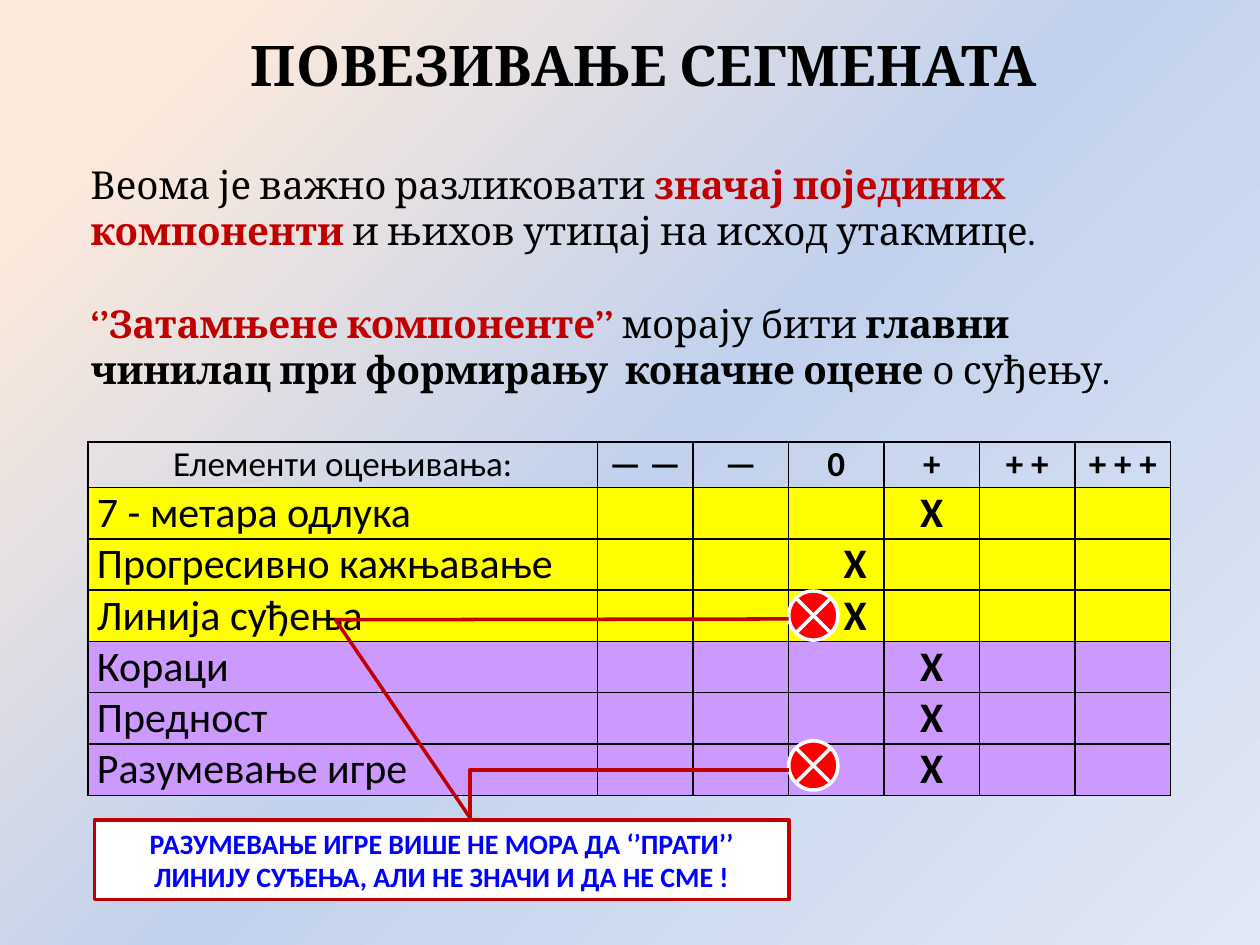
from copy import deepcopy
from typing import NamedTuple

from pptx import Presentation
from pptx.dml.color import RGBColor
from pptx.enum.shapes import MSO_CONNECTOR, MSO_SHAPE
from pptx.enum.text import MSO_ANCHOR, MSO_AUTO_SIZE, PP_ALIGN
from pptx.oxml import parse_xml
from pptx.oxml.ns import nsdecls, qn
from pptx.util import Pt

BLACK = RGBColor(0x00, 0x00, 0x00)
WHITE = RGBColor(0xFF, 0xFF, 0xFF)
RED = RGBColor(0xFF, 0x00, 0x00)
DARK_RED = RGBColor(0xC0, 0x00, 0x00)
BLUE = RGBColor(0x00, 0x00, 0xFF)
YELLOW = RGBColor(0xFF, 0xFF, 0x00)
PURPLE = RGBColor(0xCC, 0x99, 0xFF)
BACKGROUND_STOPS = [
    (0.1, RGBColor(0xFD, 0xEA, 0xDA)),
    (0.5, RGBColor(0xC2, 0xD1, 0xED)),
    (1.0, RGBColor(0xE1, 0xE8, 0xF5)),
]
SERIF, SANS = "Cambria", "Calibri"


class TextPart(NamedTuple):
    text: str
    color: RGBColor = BLACK
    bold: bool = False


class Rating(NamedTuple):
    element: str
    column: int
    fill: RGBColor
    indent: float = 0


BODY = [
    [
        TextPart("Веома је важно разликовати "),
        TextPart("значај појединих компоненти ", DARK_RED, True),
        TextPart("и њихов утицај на исход утакмице."),
    ],
    [
        TextPart("‘’Затамњене компоненте’’ ", DARK_RED, True),
        TextPart("морају бити "),
        TextPart("главни чинилац при формирању  коначне оцене", bold=True),
        TextPart(" о суђењу."),
    ],
]
HEADINGS = ["Елементи оцењивања:", "— —", "—", "0", "+", "+ +", "+ + +"]
RATINGS = [
    Rating("7 - метара одлука", 4, YELLOW),
    Rating("Прогресивно кажњавање", 3, YELLOW, 21.7),
    Rating("Линија суђења", 3, YELLOW, 21.7),
    Rating("Кораци", 4, PURPLE),
    Rating("Предност", 4, PURPLE),
    Rating("Разумевање игре", 4, PURPLE),
]
ROW_HEIGHT = 25.92
NAME_WIDTH, GRADE_WIDTH = 291, 54.6


def place(shape, left: float, top: float, width: float, height: float) -> None:
    shape.left, shape.top, shape.width, shape.height = map(Pt, (left, top, width, height))


def set_font(font, name: str, size: float, color: RGBColor, bold: bool) -> None:
    font.name, font.size, font.bold = name, Pt(size), bold
    font.color.rgb = color


def paint_background(slide) -> None:
    fill = slide.background.fill
    fill.gradient()
    fill.gradient_angle = 315
    stop_list = next(slide.element.iter(qn("a:gsLst")))
    stop_list.insert(1, deepcopy(stop_list[0]))
    for stop, (position, color) in zip(fill.gradient_stops, BACKGROUND_STOPS):
        stop.position = position
        stop.color.rgb = color


def add_title(slide) -> None:
    title = slide.shapes.title
    place(title, 44.64, 11.52, 646.56, 50.4)
    frame = title.text_frame
    frame.text = "ПОВЕЗИВАЊЕ СЕГМЕНАТА"
    frame.vertical_anchor = MSO_ANCHOR.MIDDLE
    frame.paragraphs[0].alignment = PP_ALIGN.CENTER
    set_font(frame.paragraphs[0].font, SERIF, 32, BLACK, True)


def add_body(slide) -> None:
    body = slide.placeholders[1]
    place(body, 44.64, 88.56, 646.56, 140.4)
    frame = body.text_frame
    frame.auto_size = MSO_AUTO_SIZE.NONE
    frame.vertical_anchor = MSO_ANCHOR.TOP
    for index, parts in enumerate(BODY):
        paragraph = frame.add_paragraph() if index else frame.paragraphs[0]
        paragraph.alignment = PP_ALIGN.LEFT
        paragraph.space_before = Pt(26.5 * index)
        for part in parts:
            run = paragraph.add_run()
            run.text = part.text
            set_font(run.font, SERIF, 22, part.color, part.bold)


def add_borders(cell) -> None:
    properties = cell._tc.get_or_add_tcPr()
    for index, side in enumerate(("lnL", "lnR", "lnT", "lnB")):
        properties.insert(index, parse_xml(
            f'<a:{side} {nsdecls("a")} w="12700"><a:solidFill>'
            f'<a:srgbClr val="{BLACK}"/></a:solidFill></a:{side}>'))


def write_cell(cell, text: str, size: float, bold: bool,
               alignment: PP_ALIGN, indent: float = 0) -> None:
    cell.text = text
    cell.margin_left = Pt(5 + indent)
    paragraph = cell.text_frame.paragraphs[0]
    paragraph.alignment = alignment
    set_font(paragraph.font, SANS, size, BLACK, bold)


def add_ratings_table(slide) -> None:
    row_count, column_count = len(RATINGS) + 1, len(HEADINGS)
    table = slide.shapes.add_table(
        row_count, column_count, Pt(50.4), Pt(252.72),
        Pt(NAME_WIDTH + GRADE_WIDTH * (column_count - 1)), Pt(ROW_HEIGHT * row_count)).table
    for index, column in enumerate(table.columns):
        column.width = Pt(GRADE_WIDTH if index else NAME_WIDTH)
    for row in table.rows:
        row.height = Pt(ROW_HEIGHT)
    for cell in table.iter_cells():
        cell.fill.background()
        cell.vertical_anchor = MSO_ANCHOR.MIDDLE
        cell.margin_left = cell.margin_right = Pt(5)
        cell.margin_top = cell.margin_bottom = 0
        add_borders(cell)
    for index, heading in enumerate(HEADINGS):
        write_cell(table.cell(0, index), heading, 20, index > 0, PP_ALIGN.CENTER)
    for row_index, rating in enumerate(RATINGS, start=1):
        for cell in table.rows[row_index].cells:
            cell.fill.solid()
            cell.fill.fore_color.rgb = rating.fill
        write_cell(table.cell(row_index, 0), rating.element, 24, False, PP_ALIGN.LEFT)
        write_cell(table.cell(row_index, rating.column), "Х", 24, True,
                   PP_ALIGN.CENTER, rating.indent)


def add_outlined_shape(slide, kind: MSO_SHAPE, left: float, top: float, width: float,
                       height: float, fill: RGBColor, line: RGBColor):
    shape = slide.shapes.add_shape(kind, Pt(left), Pt(top), Pt(width), Pt(height))
    shape.shadow.inherit = False
    shape.fill.solid()
    shape.fill.fore_color.rgb = fill
    shape.line.color.rgb = line
    shape.line.width = Pt(2)
    return shape


def add_callout(slide) -> None:
    callout = add_outlined_shape(slide, MSO_SHAPE.LINE_CALLOUT_2,
                                 54, 468.72, 396.72, 45.36, WHITE, DARK_RED)
    for index, value in enumerate((-0.017, 0.542, -2.526, 0.347, -2.536, 1)):
        callout.adjustments[index] = value
    frame = callout.text_frame
    frame.text = ("РАЗУМЕВАЊЕ ИГРЕ ВИШЕ НЕ МОРА ДА ‘’ПРАТИ’’ "
                  "ЛИНИЈУ СУЂЕЊА, АЛИ НЕ ЗНАЧИ И ДА НЕ СМЕ !")
    frame.word_wrap = True
    frame.vertical_anchor = MSO_ANCHOR.MIDDLE
    frame.paragraphs[0].alignment = PP_ALIGN.CENTER
    set_font(frame.paragraphs[0].font, SANS, 16, BLUE, True)


def add_elbow(slide) -> None:
    elbow = slide.shapes.add_connector(
        MSO_CONNECTOR.ELBOW, Pt(331.92), Pt(468.72), Pt(450.72), Pt(439.92))
    elbow.line.color.rgb = DARK_RED
    elbow.line.width = Pt(2.25)
    properties = elbow._element.spPr
    properties.append(parse_xml(f'<a:effectLst {nsdecls("a")}/>'))
    properties.prstGeom.get_or_add_avLst().append(
        parse_xml(f'<a:gd {nsdecls("a")} name="adj1" fmla="val -53400"/>'))


def main() -> None:
    presentation = Presentation()
    presentation.slide_width, presentation.slide_height = Pt(720), Pt(540)
    slide = presentation.slides.add_slide(presentation.slide_layouts[0])
    paint_background(slide)
    add_title(slide)
    add_body(slide)
    add_ratings_table(slide)
    for top in (337.68, 423.36):
        add_outlined_shape(slide, MSO_SHAPE.FLOWCHART_SUMMING_JUNCTION,
                           450.72, top, 28.08, 28.08, RED, WHITE)
    add_callout(slide)
    add_elbow(slide)
    presentation.save("out.pptx")


if __name__ == "__main__":
    main()
